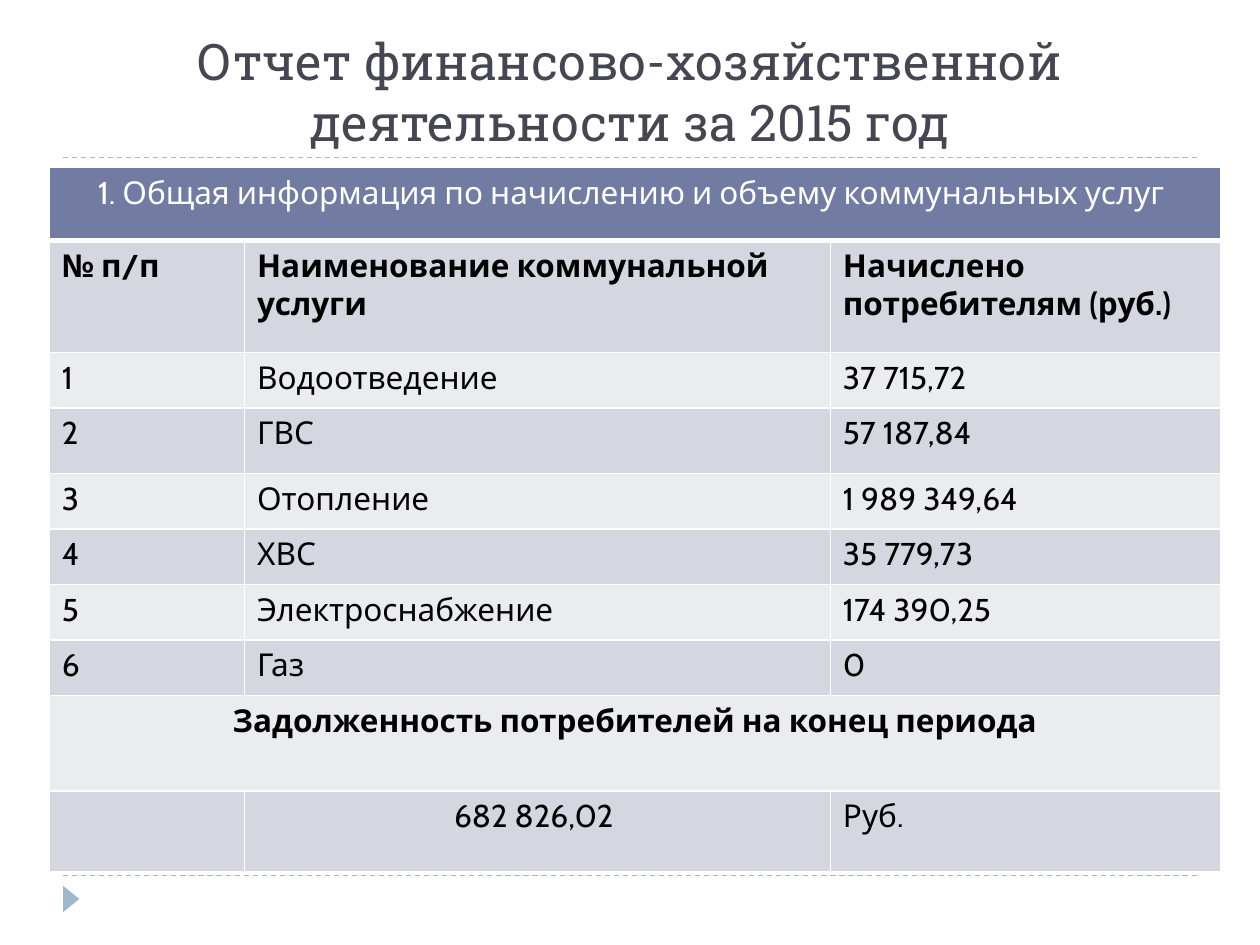
"""Build a slide with a table of utility charges for 2015."""
from lxml import etree
from pptx import Presentation, util as u
from pptx.dml.color import RGBColor
from pptx.enum import dml, shapes, text
from pptx.oxml import ns

TITLE = "Отчет финансово-хозяйственной деятельности за 2015 год"
ROWS = [
    ["1. Общая информация по начислению и объему коммунальных услуг "],
    ["№ п/п", "Наименование коммунальной услуги", "Начислено потребителям (руб.)"],
    ["1", "Водоотведение", "37 715,72"],
    ["2", "ГВС", "57 187,84"],
    ["3", "Отопление", "1 989 349,64"],
    ["4", "ХВС", "35 779,73"],
    ["5", "Электроснабжение", "174 390,25"],
    ["6", "Газ", "0"],
    ["Задолженность потребителей на конец периода"],
    ["", "682 826,02 ", "Руб."],
]
BOLD = {1, 8}
CENTER = {(0, 0), (8, 0), (9, 1)}
THEME = {
    "head": "727CA3", "bands": ("EBECF0", "D5D7E0"), "edge": "FFFFFF",
    "accent": "9FB8CD", "title": "464653", "ink": "000000",
    "title_font": "Roboto Slab", "font": "Cabin", "title_size": 28.8, "size": 18,
}
WIDE, HIGH = 10, 7.5
SIDE = WIDE / 20
RULES = (1.25, 6.95)
LEFT, TOP, UNIT = 0.39, 1.33, 1.55
COLS = [UNIT * n for n in (1, 3, 2)]
TALL = {0: 0.58, 1: 0.89, 3: 0.52, 8: 0.76, 9: 0.64}
ROW = 0.44


def rgb(name):
    return RGBColor.from_string(name)


def write(frame, words, font, size, color, bold=False, center=False):
    para = frame.paragraphs[0]
    para.alignment = text.PP_ALIGN.CENTER if center else text.PP_ALIGN.LEFT
    run = para.add_run()
    run.text = words
    face = run.font
    face.name, face.size, face.bold = font, u.Pt(size), bold
    face.color.rgb = rgb(color)


def border(cell, head):
    props = cell._tc.get_or_add_tcPr()
    for side in "LRTB":
        width = 3 if head and side == "B" else 1
        line = etree.SubElement(props, ns.qn(f"a:ln{side}"), w=str(u.Pt(width)))
        fill = etree.SubElement(line, ns.qn("a:solidFill"))
        etree.SubElement(fill, ns.qn("a:srgbClr"), val=THEME["edge"])


def rule(slide, y):
    line = slide.shapes.add_connector(
        shapes.MSO_CONNECTOR.STRAIGHT,
        *map(u.Inches, (SIDE, y, WIDE - SIDE, y)))
    line.line.color.rgb = rgb(THEME["accent"])
    line.line.width = u.Pt(0.75)
    line.line.dash_style = dml.MSO_LINE.DASH
    etree.SubElement(line._element.spPr, ns.qn("a:effectLst"))


def marker(slide):
    mark = slide.shapes.add_shape(
        shapes.MSO_SHAPE.ISOSCELES_TRIANGLE,
        *map(u.Inches, (0.46, 7.07, 0.21, 0.13)))
    mark.rotation = 90
    mark.shadow.inherit = False
    mark.fill.solid()
    mark.fill.fore_color.rgb = rgb(THEME["accent"])
    mark.line.fill.background()


def title(slide):
    box = slide.shapes.add_textbox(
        *map(u.Inches, (SIDE, 0.25, WIDE - 2 * SIDE, 1)))
    frame = box.text_frame
    frame.word_wrap = True
    frame.vertical_anchor = text.MSO_ANCHOR.BOTTOM
    write(frame, TITLE, THEME["title_font"], THEME["title_size"],
          THEME["title"], center=True)


def table(slide):
    highs = [TALL.get(r, ROW) for r in range(len(ROWS))]
    grid = slide.shapes.add_table(
        len(ROWS), len(COLS),
        *map(u.Inches, (LEFT, TOP, sum(COLS), sum(highs)))).table
    for col, width in zip(grid.columns, COLS):
        col.width = u.Inches(width)
    for r, (row, high) in enumerate(zip(ROWS, highs)):
        grid.rows[r].height = u.Inches(high)
        head = r == 0
        for c in range(len(COLS)):
            cell = grid.cell(r, c)
            border(cell, head)
            cell.fill.solid()
            cell.fill.fore_color.rgb = rgb(
                THEME["head"] if head else THEME["bands"][r % 2])
        if len(row) == 1:
            grid.cell(r, 0).merge(grid.cell(r, len(COLS) - 1))
        for c, words in enumerate(row):
            if words:
                write(grid.cell(r, c).text_frame, words, THEME["font"],
                      THEME["size"], THEME["edge" if head else "ink"],
                      r in BOLD, (r, c) in CENTER)


def main():
    deck = Presentation()
    deck.slide_width, deck.slide_height = u.Inches(WIDE), u.Inches(HIGH)
    slide = deck.slides.add_slide(deck.slide_layouts[6])
    for y in RULES:
        rule(slide, y)
    marker(slide)
    title(slide)
    table(slide)
    deck.save("out.pptx")


if __name__ == "__main__":
    main()
